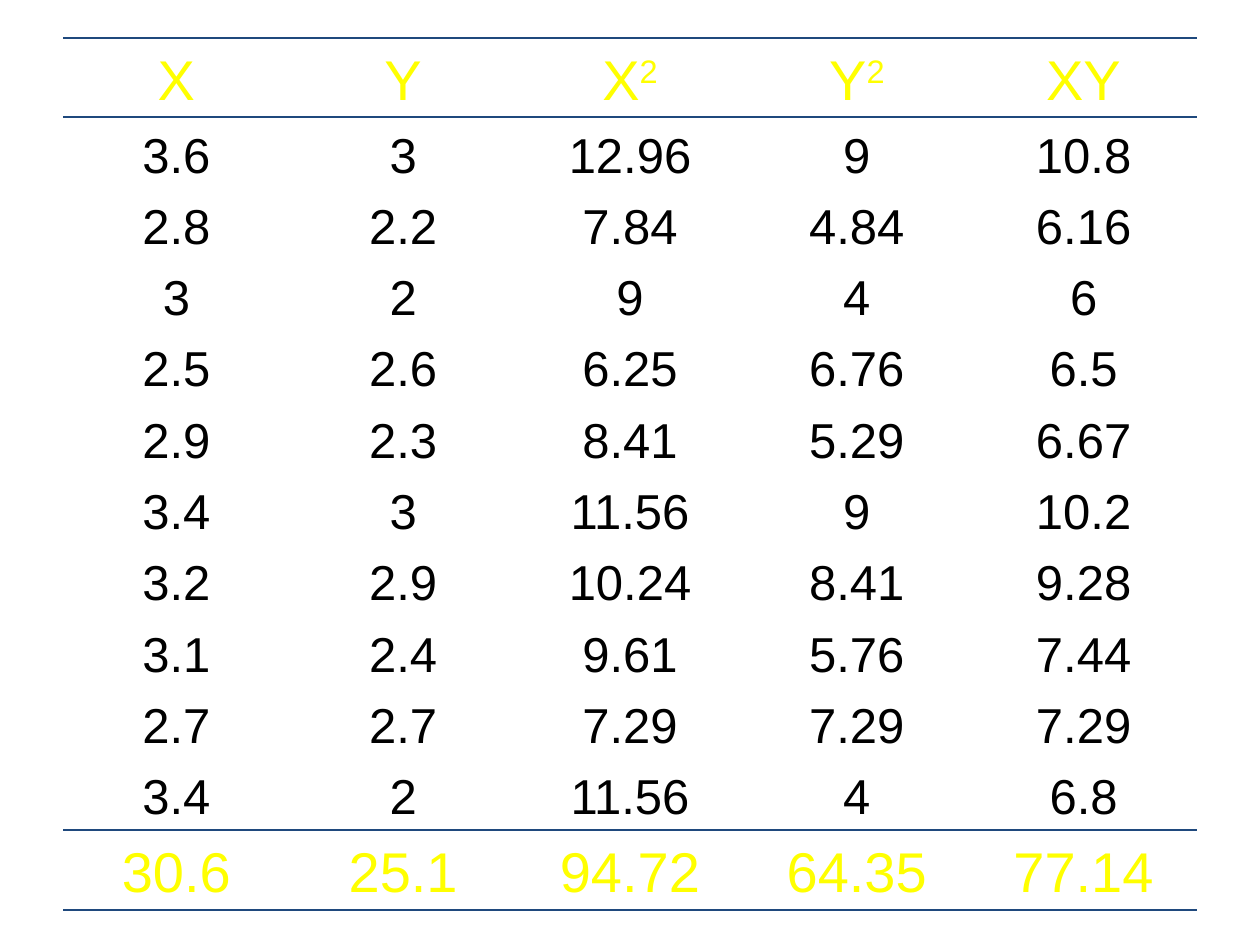
from dataclasses import dataclass

from lxml import etree
from pptx import Presentation, util as u
from pptx.dml.color import RGBColor
from pptx.enum import shapes, text
from pptx.oxml import ns

COLORS = {"heading": "FFFF00", "body": "000000", "rule": "1F497D"}
FONT = "Arial"
PLAIN_TABLE_STYLE = "{2D5ABB26-0587-4C30-8999-92F81FD0307C}"

# Table frame in inches
LEFT, TOP, RIGHT, BOTTOM = 0.5, 0.3, 9.5, 7.22
BAND_HEIGHT = 0.63
TEXT_DROP = 0.01  # keeps the cells just clear of the rule above

HEADINGS = [("X", ""), ("Y", ""), ("X", "2"), ("Y", "2"), ("XY", "")]
X = [3.6, 2.8, 3, 2.5, 2.9, 3.4, 3.2, 3.1, 2.7, 3.4]
Y = [3, 2.2, 2, 2.6, 2.3, 3, 2.9, 2.4, 2.7, 2]


@dataclass(frozen=True)
class RowStyle:
    size: int
    color: str
    height: float


BAND = RowStyle(32, COLORS["heading"], BAND_HEIGHT)
BODY = RowStyle(28, COLORS["body"], (BOTTOM - TOP - 2 * BAND_HEIGHT) / len(X))


@dataclass(frozen=True)
class Row:
    entries: list[tuple[str, str]]  # base text and superscript
    style: RowStyle


def number_row(values, style: RowStyle) -> Row:
    return Row([(f"{value:.4g}", "") for value in values], style)


def build_rows() -> list[Row]:
    """Derive squares, products and totals from the X and Y samples."""
    samples = [(x, y, x * x, y * y, x * y) for x, y in zip(X, Y)]
    totals = [sum(column) for column in zip(*samples)]
    return [
        Row(HEADINGS, BAND),
        *(number_row(sample, BODY) for sample in samples),
        number_row(totals, BAND),
    ]


def fill_cell(cell, entry: tuple[str, str], style: RowStyle) -> None:
    cell.fill.background()
    cell.vertical_anchor = text.MSO_ANCHOR.BOTTOM
    paragraph = cell.text_frame.paragraphs[0]
    base, superscript = entry
    paragraph.text = base
    paragraph.alignment = text.PP_ALIGN.CENTER
    if superscript:
        raised = paragraph.add_run()
        raised.text = superscript
        raised._r.get_or_add_rPr().set("baseline", "30000")
    for run in paragraph.runs:
        run.font.name = FONT
        run.font.size = u.Pt(style.size)
        run.font.color.rgb = RGBColor.from_string(style.color)


def add_sums_table(slide, rows: list[Row]) -> None:
    frame = slide.shapes.add_table(
        len(rows), len(HEADINGS), u.Inches(LEFT), u.Inches(TOP + TEXT_DROP),
        u.Inches(RIGHT - LEFT), u.Inches(BOTTOM - TOP),
    )
    table = frame.table
    table.first_row = table.horz_banding = False
    table._tbl.tblPr.find(ns.qn("a:tableStyleId")).text = PLAIN_TABLE_STYLE
    for table_row, row in zip(table.rows, rows):
        table_row.height = u.Inches(row.style.height)
        for cell, entry in zip(table_row.cells, row.entries):
            fill_cell(cell, entry, row.style)


def add_rule(slide, y: float) -> None:
    rule = slide.shapes.add_connector(
        shapes.MSO_CONNECTOR.STRAIGHT,
        u.Inches(LEFT), u.Inches(y), u.Inches(RIGHT), u.Inches(y),
    )
    rule.line.width = u.Pt(1)
    rule.line.color.rgb = RGBColor.from_string(COLORS["rule"])
    etree.SubElement(rule._element.spPr, ns.qn("a:effectLst"))


def main() -> None:
    deck = Presentation()
    deck.slide_width, deck.slide_height = u.Inches(10), u.Inches(7.5)
    slide = deck.slides.add_slide(deck.slide_layouts.get_by_name("Blank"))
    add_sums_table(slide, build_rows())
    for y in (TOP, BOTTOM, TOP + BAND_HEIGHT, BOTTOM - BAND_HEIGHT):
        add_rule(slide, y)
    deck.save("out.pptx")


if __name__ == "__main__":
    main()
